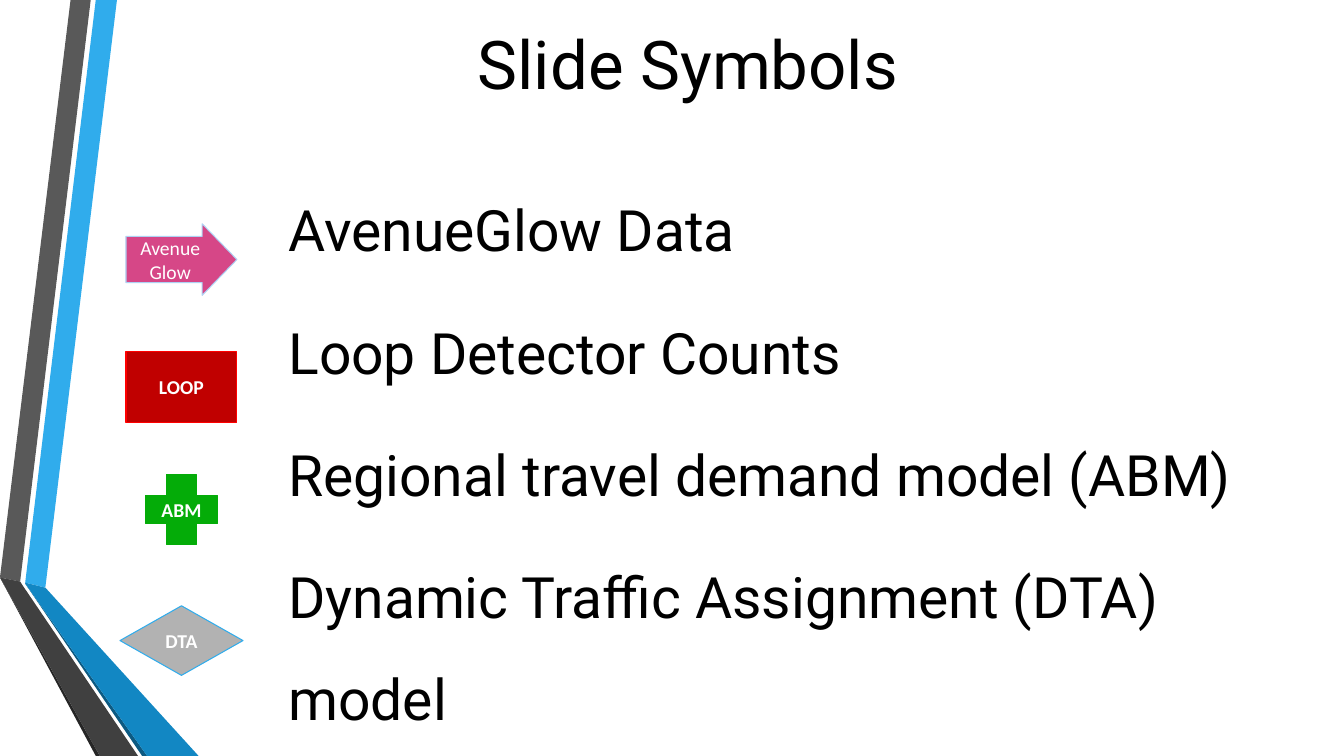
from pptx import Presentation
from pptx.dml.color import RGBColor
from pptx.enum.shapes import MSO_SHAPE
from pptx.enum.text import MSO_ANCHOR, MSO_AUTO_SIZE, PP_ALIGN
from pptx.oxml.xmlchemy import OxmlElement
from pptx.util import Inches, Pt

CENTER = PP_ALIGN.CENTER
LEFT = PP_ALIGN.LEFT
MIDDLE = MSO_ANCHOR.MIDDLE
NO_AUTOFIT = MSO_AUTO_SIZE.NONE
RECTANGLE = MSO_SHAPE.RECTANGLE
CROSS = MSO_SHAPE.CROSS
RIGHT_ARROW = MSO_SHAPE.RIGHT_ARROW
DIAMOND = MSO_SHAPE.DIAMOND

BLACK = RGBColor(0x00, 0x00, 0x00)
WHITE = RGBColor(0xFF, 0xFF, 0xFF)
SKY = RGBColor(0x30, 0xAC, 0xEC)
BLUE = RGBColor(0x12, 0x87, 0xC3)
NAVY = RGBColor(0x0C, 0x5A, 0x82)
GRAY = RGBColor(0x59, 0x59, 0x59)
DARK_GRAY = RGBColor(0x40, 0x40, 0x40)
CHARCOAL = RGBColor(0x26, 0x26, 0x26)
SILVER = RGBColor(0xB2, 0xB2, 0xB2)
DARK_RED = RGBColor(0xC0, 0x00, 0x00)
RED = RGBColor(0xFF, 0x00, 0x00)
GREEN = RGBColor(0x04, 0xAC, 0x08)
PINK = RGBColor(0xD6, 0x47, 0x87)
PALE_BLUE = RGBColor(0xAE, 0xD2, 0xF4)

deck = Presentation()
deck.slide_width = Inches(13.33)
deck.slide_height = Inches(7.5)
page = deck.slides.add_slide(deck.slide_layouts[1])


def place(shape, left, top, width, height):
    shape.left, shape.top = Inches(left), Inches(top)
    shape.width, shape.height = Inches(width), Inches(height)


def set_font(para, name, size, color, bold=False):
    para.font.name = name
    para.font.size = Pt(size)
    para.font.color.rgb = color
    para.font.bold = bold


# Ribbon corners are in hundredths of an inch.
ribbons = [
    (SKY, [(25, 578), (45, 583), (116, 0), (95, 0)]),
    (GRAY, [(90, 0), (70, 0), (0, 573), (20, 577)]),
    (CHARCOAL, [(0, 573), (95, 750), (99, 750)]),
    (NAVY, [(25, 579), (141, 750), (146, 750)]),
    (BLUE, [(25, 579), (146, 750), (197, 750), (45, 583), (25, 578)]),
    (DARK_GRAY, [(137, 750), (24, 583), (20, 577), (0, 573), (99, 750)]),
]
for color, corners in ribbons:
    outline = page.shapes.build_freeform(*corners[0], scale=Inches(0.01))
    outline.add_line_segments(corners[1:], close=True)
    ribbon = outline.convert_to_shape()
    ribbon.shadow.inherit = False
    ribbon.fill.solid()
    ribbon.fill.fore_color.rgb = color
    ribbon.line.fill.background()

title = page.shapes.title
place(title, 1.08, 0, 11.49, 1.24)
title.text_frame.text = "Slide Symbols"
title.text_frame.vertical_anchor = MIDDLE
title.text_frame.auto_size = NO_AUTOFIT
title.text_frame.paragraphs[0].alignment = CENTER
set_font(title.text_frame.paragraphs[0], "Roboto", 48, BLACK)

body = page.placeholders[1]
place(body, 2.76, 1.89, 10.02, 5.08)
body.text_frame.text = "\n".join([
    "AvenueGlow Data",
    "Loop Detector Counts",
    "Regional travel demand model (ABM)",
    "Dynamic Traffic Assignment (DTA) model",
])
body.text_frame.vertical_anchor = MIDDLE
body.text_frame.auto_size = NO_AUTOFIT
for index, para in enumerate(body.text_frame.paragraphs):
    properties = para._p.get_or_add_pPr()
    properties.set("marL", "0")
    properties.set("indent", "0")
    properties.append(OxmlElement("a:buNone"))
    para.alignment = LEFT
    para.line_spacing = 1.5
    para.space_before = Pt(8 if index else 0)
    para.space_after = Pt(6)
    set_font(para, "Roboto", 40.7, BLACK)

symbols = [
    (RECTANGLE, (1.25, 3.49, 1.1, 0.7), [], DARK_RED, RED, "LOOP", True),
    (CROSS, (1.44, 4.71, 0.72, 0.69), [0.302], GREEN, GREEN, "ABM", True),
    (RIGHT_ARROW, (1.25, 2.22, 1.1, 0.71), [0.646, 0.485], PINK, PALE_BLUE, "Avenue\nGlow", False),
    (DIAMOND, (1.19, 6.01, 1.22, 0.69), [], SILVER, SKY, "DTA", True),
]
for kind, bounds, adjustments, fill, edge, label, bold in symbols:
    symbol = page.shapes.add_shape(kind, *map(Inches, bounds))
    for index, value in enumerate(adjustments):
        symbol.adjustments[index] = value
    symbol.shadow.inherit = False
    symbol.fill.solid()
    symbol.fill.fore_color.rgb = fill
    symbol.line.color.rgb = edge
    symbol.line.width = Pt(0.75)
    frame = symbol.text_frame
    frame.text = label
    frame.word_wrap = False
    frame.vertical_anchor = MIDDLE
    for para in frame.paragraphs:
        para.alignment = CENTER
        set_font(para, "Calibri", 14, WHITE, bold)

deck.save("out.pptx")
